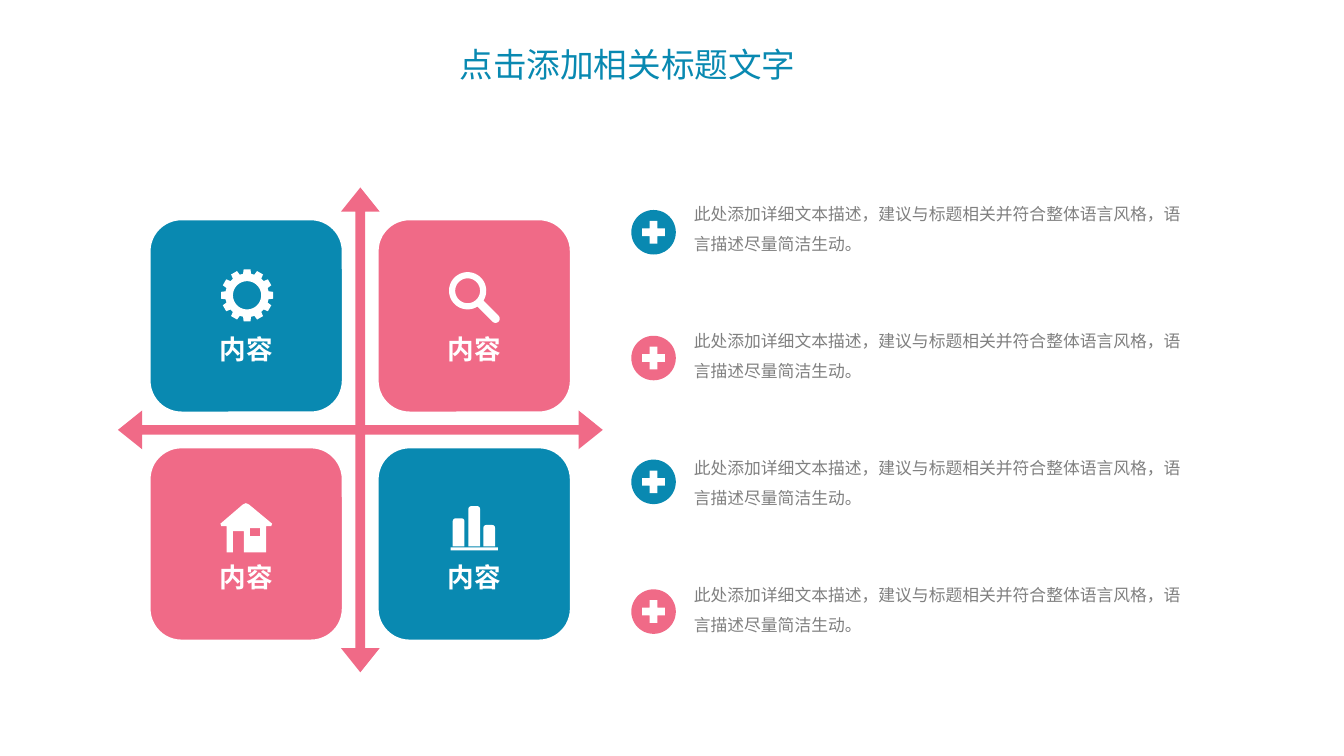
from dataclasses import dataclass
from math import cos, radians, sin

from lxml.etree import SubElement
from pptx import Presentation
from pptx.dml.color import RGBColor
from pptx.enum.shapes import MSO_SHAPE
from pptx.enum.text import MSO_ANCHOR, MSO_AUTO_SIZE, PP_ALIGN
from pptx.oxml.ns import qn
from pptx.shapes.base import BaseShape
from pptx.slide import Slide
from pptx.text.text import TextFrame
from pptx.util import Emu, Pt

COLUMNS, ROWS = 160, 90
CELL = 76200
COLORS = {"blue": "0989B1", "pink": "F06A87", "white": "FFFFFF", "gray": "808080"}
CHINESE_FONT = "Noto Sans CJK SC"
DESCRIPTION = "此处添加详细文本描述，建议与标题相关并符合整体语言风格，语言描述尽量简洁生动。"

Point = tuple[float, float]
Contour = list[Point]


@dataclass(frozen=True)
class Box:
    left: float
    top: float
    width: float
    height: float

    def lengths(self) -> tuple[Emu, Emu, Emu, Emu]:
        return cells(self.left), cells(self.top), cells(self.width), cells(self.height)


@dataclass(frozen=True)
class Tile:
    column: int
    row: int
    color: str


@dataclass(frozen=True)
class Note:
    badge_top: float
    color: str


@dataclass(frozen=True)
class Bar:
    left: float
    top: float


TILES = [Tile(0, 0, "blue"), Tile(1, 0, "pink"), Tile(0, 1, "pink"), Tile(1, 1, "blue")]
NOTES = [Note(25, "blue"), Note(39.98, "pink"), Note(54.72, "blue"), Note(70.16, "pink")]
BARS = [Bar(53.9, 61.7), Bar(55.76, 60.25), Bar(57.55, 62.5)]
TILE_LEFT, TILE_TOP, TILE_STEP, TILE_SIZE = 17.76, 26.06, 27.15, 23.1
NOTE_TOP, NOTE_STEP = 23.04, 15.12
BADGE_LEFT, BADGE_SIZE, PLUS_SIZE = 75.16, 5.3, 2.7
BAR_WIDTH, BAR_BOTTOM = 1.4, 65.04
HOUSE_WALLS: Contour = [
    (28.92, 60.06), (29.28, 59.9), (29.64, 60.06), (32.4, 62.35), (32.3, 62.64),
    (31.68, 62.64), (31.68, 65.76), (29.04, 65.76), (29.04, 63.24), (27.72, 63.24),
    (27.72, 65.76), (27, 65.76), (27, 62.64), (26.35, 62.64), (26.25, 62.35),
]
HOUSE_WINDOW: Contour = [(29.76, 62.88), (30.96, 62.88), (30.96, 63.84), (29.76, 63.84)]


def cells(count: float) -> Emu:
    return Emu(round(count * CELL))


def color_of(name: str) -> RGBColor:
    return RGBColor.from_string(COLORS[name])


def polar(center: Point, radius: float, degrees: float) -> Point:
    angle = radians(degrees)
    return center[0] + radius * cos(angle), center[1] + radius * sin(angle)


def arc(center: Point, radius: float, start: float, end: float, steps: int = 48) -> Contour:
    return [polar(center, radius, start + (end - start) * step / steps) for step in range(steps + 1)]


def paint(shape: BaseShape, color: str) -> None:
    shape.shadow.inherit = False
    shape.fill.solid()
    shape.fill.fore_color.rgb = color_of(color)
    shape.line.fill.background()


def add_preset(slide: Slide, kind: MSO_SHAPE, box: Box, color: str, *adjustments: float) -> BaseShape:
    shape = slide.shapes.add_shape(kind, *box.lengths())
    for index, adjustment in enumerate(adjustments):
        shape.adjustments[index] = adjustment
    paint(shape, color)
    return shape


def add_outline(slide: Slide, contours: list[Contour]) -> None:
    points = [[(cells(x), cells(y)) for x, y in contour] for contour in contours]
    builder = slide.shapes.build_freeform(*points[0][0])
    for index, contour in enumerate(points):
        if index:
            builder.move_to(*contour[0])
        builder.add_line_segments(contour[1:], close=True)
    paint(builder.convert_to_shape(), "white")


def write(frame: TextFrame, text: str, size: int, color: str, font_name: str,
          alignment: PP_ALIGN, spacing: float, bold: bool = False) -> None:
    frame.word_wrap = True
    paragraph = frame.paragraphs[0]
    paragraph.text = text
    paragraph.alignment = alignment
    paragraph.line_spacing = spacing
    font = paragraph.font
    font.size, font.bold, font.name = Pt(size), bold, font_name
    font.color.rgb = color_of(color)
    properties = paragraph._p.pPr.find(qn("a:defRPr"))
    SubElement(properties, qn("a:ea")).set("typeface", CHINESE_FONT)


def add_title(slide: Slide) -> None:
    title = slide.shapes.title
    title.left, title.top, title.width, title.height = Box(53.5, 4.68, 42.9, 6).lengths()
    frame = title.text_frame
    frame.auto_size = MSO_AUTO_SIZE.NONE
    frame.vertical_anchor = MSO_ANCHOR.MIDDLE
    write(frame, "点击添加相关标题文字", 24, "blue", CHINESE_FONT, PP_ALIGN.LEFT, 1.0)


def add_tile(slide: Slide, tile: Tile) -> None:
    box = Box(TILE_LEFT + tile.column * TILE_STEP, TILE_TOP + tile.row * TILE_STEP, TILE_SIZE, TILE_SIZE)
    shape = add_preset(slide, MSO_SHAPE.ROUNDED_RECTANGLE, box, tile.color)
    shape.line.color.rgb = color_of("white")
    shape.line.width = Pt(2)
    frame = shape.text_frame
    frame.margin_top, frame.margin_bottom = cells(8.3), 0
    frame.vertical_anchor = MSO_ANCHOR.MIDDLE
    write(frame, "内容", 19, "white", "Arial", PP_ALIGN.CENTER, 0.9, bold=True)


def add_gear(slide: Slide) -> None:
    center = (29.42, 35.16)
    tooth = [(-10.5, 2.6), (-7.5, 3.12), (7.5, 3.12), (10.5, 2.6)]
    teeth = [polar(center, radius, turn + offset) for turn in range(0, 360, 30) for offset, radius in tooth]
    add_outline(slide, [teeth, arc(center, 1.68, 0, 360)])


def add_magnifier(slide: Slide) -> None:
    center = (55.68, 34.62)
    handle_end = polar(center, 4.7, 45)
    outline = arc(center, 2.22, 58, 392) + arc(handle_end, 0.5, -45, 135, 12)
    add_outline(slide, [outline, arc(center, 1.48, 0, 360)])


def add_bar_icon(slide: Slide) -> None:
    for bar in BARS:
        box = Box(bar.left, bar.top, BAR_WIDTH, BAR_BOTTOM - bar.top)
        add_preset(slide, MSO_SHAPE.ROUND_2_SAME_RECTANGLE, box, "white", 0.25)
    add_preset(slide, MSO_SHAPE.RECTANGLE, Box(53.64, 65.16, 5.64, 0.36), "white")


def add_note(slide: Slide, row: int, note: Note) -> None:
    text_box = slide.shapes.add_textbox(*Box(82.6, NOTE_TOP + row * NOTE_STEP, 59.04, 10).lengths())
    frame = text_box.text_frame
    frame.margin_left = frame.margin_right = frame.margin_top = frame.margin_bottom = 0
    write(frame, DESCRIPTION, 12, "gray", CHINESE_FONT, PP_ALIGN.LEFT, 1.5)
    inset = (BADGE_SIZE - PLUS_SIZE) / 2
    badge = Box(BADGE_LEFT, note.badge_top, BADGE_SIZE, BADGE_SIZE)
    plus = Box(BADGE_LEFT + inset, note.badge_top + inset, PLUS_SIZE, PLUS_SIZE)
    add_preset(slide, MSO_SHAPE.OVAL, badge, note.color)
    add_preset(slide, MSO_SHAPE.CROSS, plus, "white", 0.33)


def main() -> None:
    presentation = Presentation()
    presentation.slide_width, presentation.slide_height = cells(COLUMNS), cells(ROWS)
    slide = presentation.slides.add_slide(presentation.slide_layouts[5])
    add_title(slide)
    add_preset(slide, MSO_SHAPE.QUAD_ARROW, Box(14.04, 22.32, 57.72, 57.72), "pink", 0.02, 0.04, 0.05)
    for tile in TILES:
        add_tile(slide, tile)
    add_outline(slide, [HOUSE_WALLS, HOUSE_WINDOW])
    add_magnifier(slide)
    add_bar_icon(slide)
    add_gear(slide)
    for row, note in enumerate(NOTES):
        add_note(slide, row, note)
    presentation.save("out.pptx")


if __name__ == "__main__":
    main()
